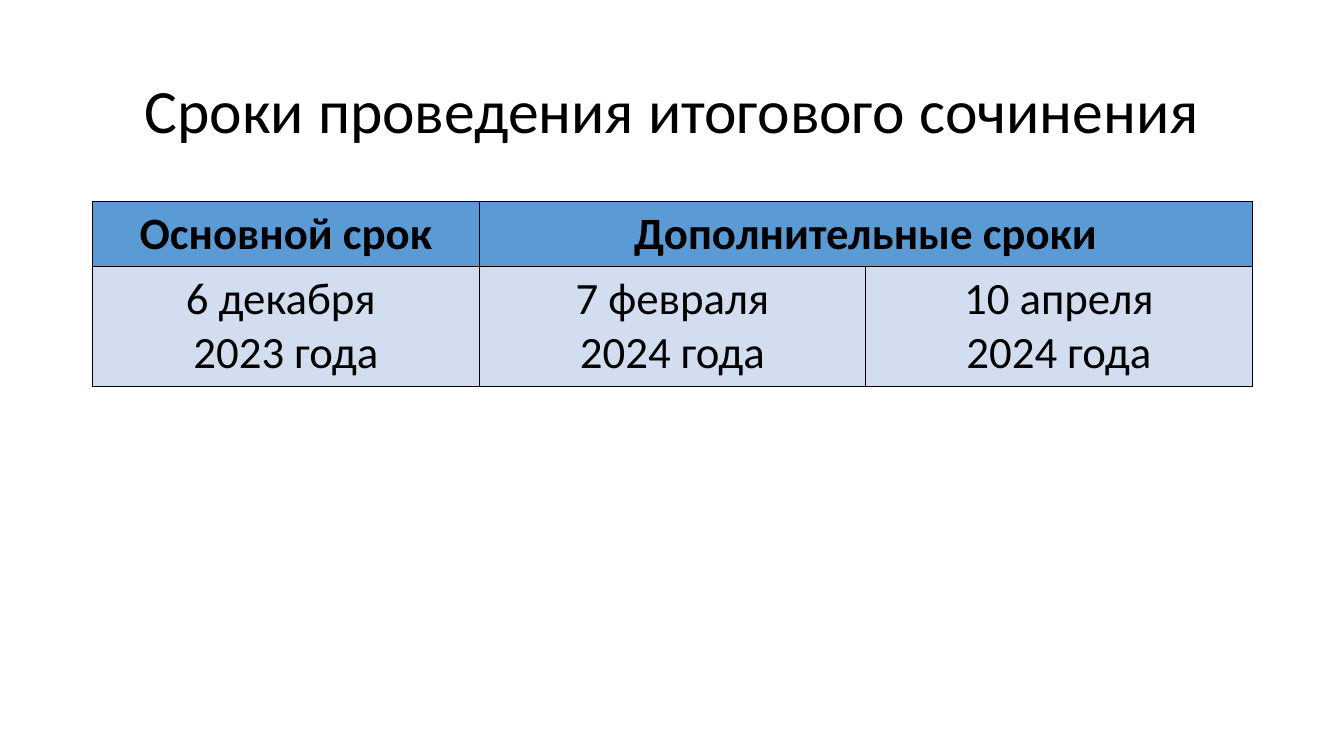
import pptx
import pptx.dml.color
import pptx.enum.text
import pptx.oxml
import pptx.oxml.ns
import pptx.util
from pptx.util import Inches

BLACK = pptx.dml.color.RGBColor(0x00, 0x00, 0x00)
HEADER_BLUE = pptx.dml.color.RGBColor(0x5B, 0x9B, 0xD5)
DATE_BLUE = pptx.dml.color.RGBColor(0xD2, 0xDE, 0xEF)

LEFT, WIDTH = 0.92, 11.5
ROW_HEIGHTS = (0.64, 1.17)
HEADINGS = [["Основной срок"], ["Дополнительные сроки"]]
DATES = [
    ["6 декабря ", "2023 года"],
    [" 7 февраля ", "2024 года"],
    ["10 апреля", "2024 года"],
]


class ScheduleSlide:
    font = "Calibri"
    title_size = 44
    table_size = 32

    def __init__(self, deck):
        self.slide = deck.slides.add_slide(deck.slide_layouts[5])

    def add_lines(self, frame, lines, size, bold=False, spacing=1.0):
        for index, line in enumerate(lines):
            paragraph = frame.add_paragraph() if index else frame.paragraphs[0]
            paragraph.alignment = pptx.enum.text.PP_ALIGN.CENTER
            paragraph.line_spacing = spacing
            run = paragraph.add_run()
            run.text = line
            run.font.name = self.font
            run.font.size = pptx.util.Pt(size)
            run.font.bold = bold
            run.font.color.rgb = BLACK

    def title(self, wording):
        heading = self.slide.shapes.title
        heading.left, heading.top = Inches(LEFT), Inches(0.4)
        heading.width, heading.height = Inches(WIDTH), Inches(1.45)
        frame = heading.text_frame
        frame.word_wrap = True
        frame.auto_size = pptx.enum.text.MSO_AUTO_SIZE.NONE
        frame.vertical_anchor = pptx.enum.text.MSO_ANCHOR.MIDDLE
        self.add_lines(frame, [wording], self.title_size, spacing=0.9)

    def border(self, cell):
        """Draw a thin black line on all four sides of the cell."""
        properties = cell._tc.get_or_add_tcPr()
        for position, side in enumerate(("lnL", "lnR", "lnT", "lnB")):
            properties.insert(position, pptx.oxml.parse_xml(
                f'<a:{side} {pptx.oxml.ns.nsdecls("a")} w="12700">'
                f'<a:solidFill><a:srgbClr val="{BLACK}"/></a:solidFill></a:{side}>'
            ))

    def fill_cell(self, cell, lines, color, bold=False):
        cell.fill.solid()
        cell.fill.fore_color.rgb = color
        cell.vertical_anchor = pptx.enum.text.MSO_ANCHOR.MIDDLE
        self.add_lines(cell.text_frame, lines, self.table_size, bold)

    def table(self, headings, dates):
        schedule = self.slide.shapes.add_table(
            2, len(dates), Inches(LEFT), Inches(2),
            Inches(WIDTH), Inches(sum(ROW_HEIGHTS)),
        ).table
        for row, height in zip(schedule.rows, ROW_HEIGHTS):
            row.height = Inches(height)
        schedule.cell(0, 1).merge(schedule.cell(0, 2))
        for column, lines in enumerate(headings):
            self.fill_cell(schedule.cell(0, column), lines, HEADER_BLUE, bold=True)
        for column, lines in enumerate(dates):
            self.fill_cell(schedule.cell(1, column), lines, DATE_BLUE)
        for cell in schedule.iter_cells():
            self.border(cell)


def main():
    deck = pptx.Presentation()
    deck.slide_width, deck.slide_height = Inches(13.33), Inches(7.5)
    page = ScheduleSlide(deck)
    page.title("Сроки проведения итогового сочинения")
    page.table(HEADINGS, DATES)
    deck.save("out.pptx")


if __name__ == "__main__":
    main()
